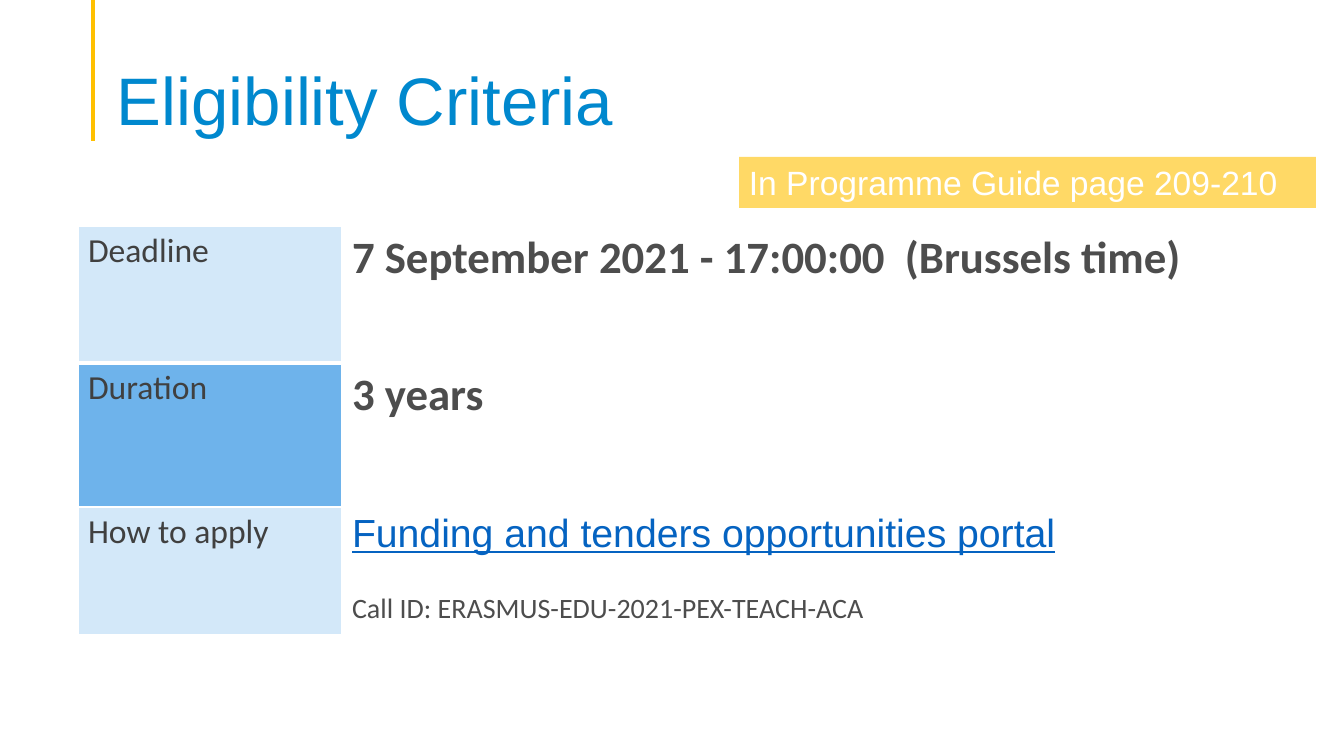
"""Build the Eligibility Criteria slide."""
from lxml import etree
from pptx import Presentation, util as u
from pptx.dml.color import RGBColor
from pptx.enum import shapes, text
from pptx.oxml.ns import qn

AZURE = RGBColor(0x00, 0x88, 0xCE)
AMBER = RGBColor(0xFF, 0xC0, 0x00)
SAND = RGBColor(0xFF, 0xD9, 0x66)
PALE = RGBColor(0xD3, 0xE8, 0xF9)
SKY = RGBColor(0x6E, 0xB3, 0xEB)
LINK = RGBColor(0x05, 0x63, 0xC1)
GRAPHITE = RGBColor(0x40, 0x40, 0x40)
SLATE = RGBColor(0x4D, 0x4D, 0x4D)
WHITE = RGBColor(0xFF, 0xFF, 0xFF)

TITLE = "Eligibility Criteria"
GUIDE = "In Programme Guide page 209-210"
BOLD_FACT = dict(size=32, color=SLATE, bold=True)
CRITERIA = [
    ("Deadline", PALE, 137, 3,
     [("7 September 2021 - 17:00:00  (Brussels time)", BOLD_FACT)]),
    ("Duration", SKY, 144, 1, [("3 years", BOLD_FACT)]),
    ("How to apply", PALE, 125, 1,
     [("Funding and tenders opportunities portal",
       dict(size=28, color=LINK, name="Arial", underline=True, after=26)),
      ("Call ID: ERASMUS-EDU-2021-PEX-TEACH-ACA",
       dict(size=20, color=SLATE))]),
]
COLUMNS = (264, 924)


def px(length):
    return u.Emu(round(length * 914400 / 100.8))


def write(frame, lines):
    for i, (words, look) in enumerate(lines):
        paragraph = frame.add_paragraph() if i else frame.paragraphs[0]
        paragraph.text = words
        paragraph.alignment = text.PP_ALIGN.LEFT
        paragraph.space_after = u.Pt(look.get("after", 0))
        font = paragraph.font
        font.size = u.Pt(look["size"])
        font.name = look.get("name", "Calibri")
        font.color.rgb = look["color"]
        font.bold = look.get("bold", False)
        font.underline = look.get("underline", False)


def add_borders(cell, top, bottom):
    properties = cell._tc.get_or_add_tcPr()
    for side, points in (("L", 1), ("R", 1), ("T", top), ("B", bottom)):
        line = etree.SubElement(properties, qn(f"a:ln{side}"), w=str(u.Pt(points)))
        paint = etree.SubElement(line, qn("a:solidFill"))
        etree.SubElement(paint, qn("a:srgbClr"), val=str(WHITE))


def main():
    deck = Presentation()
    deck.slide_width, deck.slide_height = px(1344), px(756)
    slide = deck.slides.add_slide(deck.slide_layouts[6])

    rule = slide.shapes.add_connector(
        shapes.MSO_CONNECTOR.STRAIGHT, px(93), px(0), px(93), px(141))
    rule.line.color.rgb = AMBER
    rule.line.width = u.Pt(2.25)
    etree.SubElement(rule._element.spPr, qn("a:effectLst"))

    title = slide.shapes.add_textbox(px(107), px(61), px(1159), px(79)).text_frame
    title.word_wrap = True
    title.vertical_anchor = text.MSO_ANCHOR.BOTTOM
    title.margin_bottom = 0
    write(title, [(TITLE, dict(size=48, color=AZURE, name="Arial"))])
    title.paragraphs[0].line_spacing = 0.9

    guide = slide.shapes.add_textbox(px(739), px(157), px(577), px(51))
    guide.fill.solid()
    guide.fill.fore_color.rgb = SAND
    guide.text_frame.word_wrap = True
    write(guide.text_frame, [(GUIDE, dict(size=24, color=WHITE, name="Arial"))])

    height = sum(row[2] for row in CRITERIA)
    table = slide.shapes.add_table(
        len(CRITERIA), len(COLUMNS), px(78), px(226),
        px(sum(COLUMNS)), px(height)).table
    table.first_row = table.horz_banding = False
    for column, width in zip(table.columns, COLUMNS):
        column.width = px(width)
    top = 1
    for r, (label, tint, row_height, bottom, facts) in enumerate(CRITERIA):
        table.rows[r].height = px(row_height)
        label_cell, fact_cell = table.cell(r, 0), table.cell(r, 1)
        for cell in (label_cell, fact_cell):
            add_borders(cell, top, bottom)
        label_cell.fill.solid()
        label_cell.fill.fore_color.rgb = tint
        fact_cell.fill.background()
        write(label_cell.text_frame, [(label, dict(size=24, color=GRAPHITE))])
        write(fact_cell.text_frame, facts)
        top = bottom

    deck.save("out.pptx")


if __name__ == "__main__":
    main()
